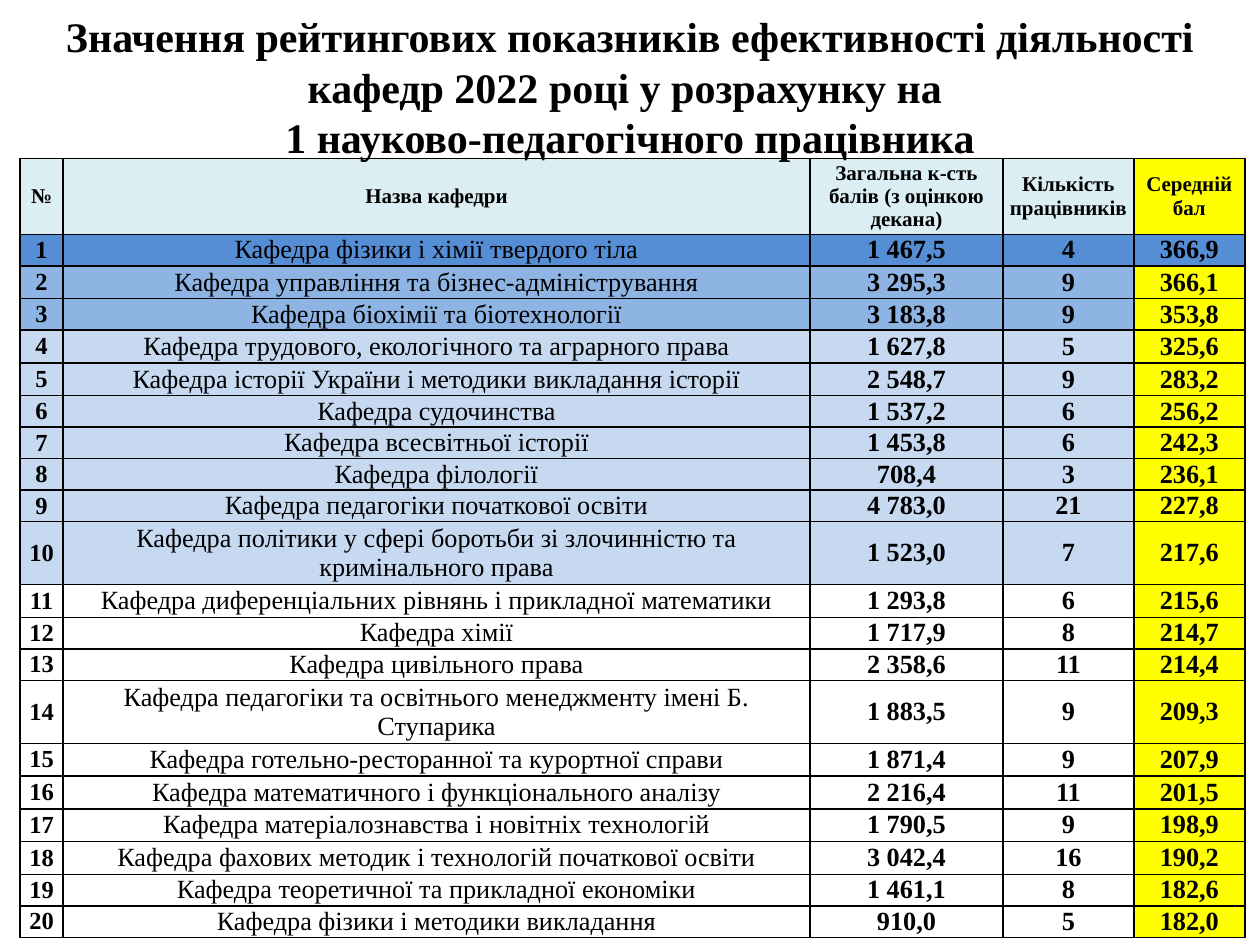
"""Build the slide ranking university departments by average score per employee."""
import dataclasses

import lxml.etree
import pptx
import pptx.dml.color
import pptx.enum.text
import pptx.oxml.ns
import pptx.slide
import pptx.table
import pptx.text.text
import pptx.util

Inches = pptx.util.Inches
RGBColor = pptx.dml.color.RGBColor

BLACK = RGBColor(0x00, 0x00, 0x00)
WHITE = RGBColor(0xFF, 0xFF, 0xFF)
YELLOW = RGBColor(0xFF, 0xFF, 0x00)
HEADER_TINT = RGBColor(0xDB, 0xEE, 0xF4)
FIRST_BLUE = RGBColor(0x55, 0x8E, 0xD5)
PODIUM_BLUE = RGBColor(0x8E, 0xB4, 0xE3)
TOP_TEN_BLUE = RGBColor(0xC6, 0xD9, 0xF1)

FONT = "Times New Roman"
NBSP = chr(160)
TITLE = (
    "Значення рейтингових показників ефективності діяльності кафедр 2022 році "
    "у розрахунку на \v1 науково-педагогічного працівника"
)
HEADINGS = (
    "№",
    "Назва кафедри",
    "Загальна к-сть балів (з оцінкою декана)",
    "Кількість працівників",
    "Середній бал",
)
COLUMN_WIDTHS = (0.34, 5.93, 1.53, 1.04, 0.88)
HEADER_HEIGHT = 0.6


@dataclasses.dataclass(frozen=True)
class Department:
    """One ranked department with its scores."""

    name: str
    total: float
    staff: int
    average: float

    def row_height(self) -> float:
        """Return the row height in inches that suits the length of the name."""
        if len(self.name) > 60:
            return 0.5
        return 0.26 if len(self.name) > 43 else 0.25


DEPARTMENTS = (
    Department("Кафедра фізики і хімії твердого тіла", 1467.5, 4, 366.9),
    Department("Кафедра управління та бізнес-адміністрування", 3295.3, 9, 366.1),
    Department("Кафедра біохімії та біотехнології", 3183.8, 9, 353.8),
    Department("Кафедра трудового, екологічного та аграрного права", 1627.8, 5, 325.6),
    Department("Кафедра історії України і методики викладання історії", 2548.7, 9, 283.2),
    Department("Кафедра судочинства", 1537.2, 6, 256.2),
    Department("Кафедра всесвітньої історії", 1453.8, 6, 242.3),
    Department("Кафедра філології", 708.4, 3, 236.1),
    Department("Кафедра педагогіки початкової освіти", 4783.0, 21, 227.8),
    Department(
        "Кафедра політики у сфері боротьби зі злочинністю та кримінального права",
        1523.0, 7, 217.6,
    ),
    Department("Кафедра диференціальних рівнянь і прикладної математики", 1293.8, 6, 215.6),
    Department("Кафедра хімії", 1717.9, 8, 214.7),
    Department("Кафедра цивільного права", 2358.6, 11, 214.4),
    Department(
        "Кафедра педагогіки та освітнього менеджменту імені Б. Ступарика",
        1883.5, 9, 209.3,
    ),
    Department("Кафедра готельно-ресторанної та курортної справи", 1871.4, 9, 207.9),
    Department("Кафедра математичного і функціонального аналізу", 2216.4, 11, 201.5),
    Department("Кафедра матеріалознавства і новітніх технологій", 1790.5, 9, 198.9),
    Department("Кафедра фахових методик і технологій початкової освіти", 3042.4, 16, 190.2),
    Department("Кафедра теоретичної та прикладної економіки", 1461.1, 8, 182.6),
    Department("Кафедра фізики і методики викладання", 910.0, 5, 182.0),
)


def format_score(score: float) -> str:
    """Write a score with a decimal comma and spaced thousands."""
    return f"{score:,.1f}".replace(",", NBSP).replace(".", ",")


def rank_color(rank: int) -> RGBColor:
    """Return the band colour of a rank."""
    if rank == 1:
        return FIRST_BLUE
    if rank <= 3:
        return PODIUM_BLUE
    return TOP_TEN_BLUE if rank <= 10 else WHITE


def style_text(frame: pptx.text.text.TextFrame, size: float, bold: bool) -> None:
    """Centre the text and set its font."""
    for paragraph in frame.paragraphs:
        paragraph.alignment = pptx.enum.text.PP_ALIGN.CENTER
        for run in paragraph.runs:
            run.font.name = FONT
            run.font.size = pptx.util.Pt(size)
            run.font.bold = bold
            run.font.color.rgb = BLACK


def add_borders(cell: pptx.table._Cell) -> None:
    """Outline a cell with thin black lines."""
    properties = cell._tc.get_or_add_tcPr()
    qn = pptx.oxml.ns.qn
    for side in ("a:lnL", "a:lnR", "a:lnT", "a:lnB"):
        line = lxml.etree.SubElement(properties, qn(side), w=str(pptx.util.Pt(1)))
        fill = lxml.etree.SubElement(line, qn("a:solidFill"))
        lxml.etree.SubElement(fill, qn("a:srgbClr"), val=str(BLACK))


def fill_cell(
    cell: pptx.table._Cell, text: str, color: RGBColor, size: float, bold: bool = True
) -> None:
    """Write one table cell with its fill and borders."""
    cell.text_frame.text = text
    style_text(cell.text_frame, size, bold)
    cell.vertical_anchor = pptx.enum.text.MSO_ANCHOR.MIDDLE
    cell.margin_left = cell.margin_right = Inches(0.02)
    cell.margin_top = cell.margin_bottom = 0
    add_borders(cell)
    cell.fill.solid()
    cell.fill.fore_color.rgb = color


def add_ranking(slide: pptx.slide.Slide) -> None:
    """Draw the table of departments."""
    heights = [HEADER_HEIGHT] + [department.row_height() for department in DEPARTMENTS]
    ranking = slide.shapes.add_table(
        len(heights), len(COLUMN_WIDTHS),
        Inches(0.16), Inches(1.26), Inches(sum(COLUMN_WIDTHS)), Inches(sum(heights)),
    ).table
    for column, width in zip(ranking.columns, COLUMN_WIDTHS):
        column.width = Inches(width)
    for row, height in zip(ranking.rows, heights):
        row.height = Inches(height)

    for column, heading in enumerate(HEADINGS):
        color = YELLOW if heading == HEADINGS[-1] else HEADER_TINT
        fill_cell(ranking.cell(0, column), heading, color, 12)

    for rank, department in enumerate(DEPARTMENTS, start=1):
        band = rank_color(rank)
        fill_cell(ranking.cell(rank, 0), str(rank), band, 14)
        fill_cell(ranking.cell(rank, 1), department.name, band, 15, bold=False)
        fill_cell(ranking.cell(rank, 2), format_score(department.total), band, 15)
        fill_cell(ranking.cell(rank, 3), str(department.staff), band, 15)
        average_color = band if rank == 1 else YELLOW
        fill_cell(ranking.cell(rank, 4), format_score(department.average), average_color, 15)


def add_title(slide: pptx.slide.Slide) -> None:
    """Write the slide title."""
    title = slide.shapes.add_textbox(0, Inches(0.3), Inches(10), Inches(0.77)).text_frame
    title.word_wrap = True
    title.vertical_anchor = pptx.enum.text.MSO_ANCHOR.MIDDLE
    title.text = TITLE
    style_text(title, 24, True)


def main() -> None:
    """Build and save the presentation."""
    presentation = pptx.Presentation()
    presentation.slide_width = Inches(10)
    presentation.slide_height = Inches(7.5)
    slide = presentation.slides.add_slide(presentation.slide_layouts[6])
    add_ranking(slide)
    add_title(slide)
    presentation.save("out.pptx")


if __name__ == "__main__":
    main()
